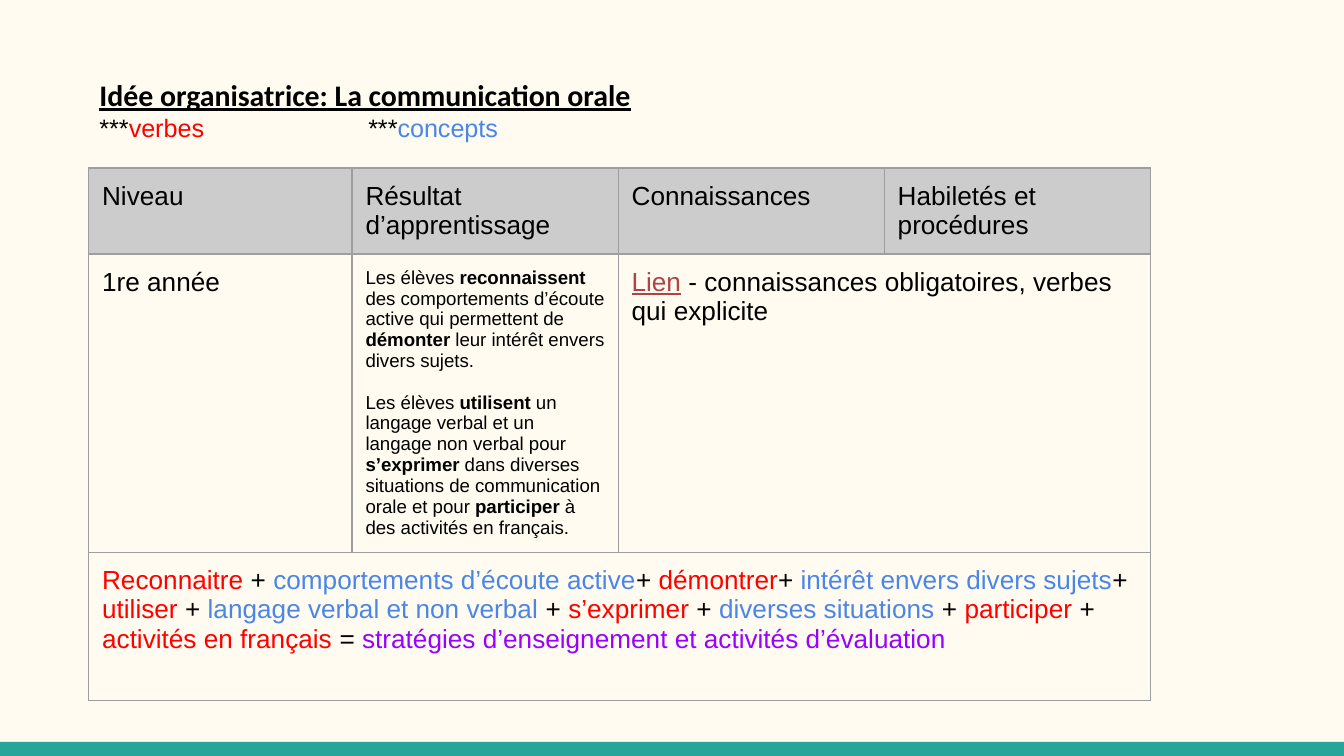
from lxml import etree
from pptx import Presentation
from pptx.dml.color import RGBColor
from pptx.enum.shapes import MSO_SHAPE
from pptx.enum.text import MSO_ANCHOR, MSO_AUTO_SIZE, PP_ALIGN
from pptx.oxml.ns import qn
from pptx.util import Inches, Pt

RECTANGLE = MSO_SHAPE.RECTANGLE
TOP = MSO_ANCHOR.TOP
NO_AUTOFIT = MSO_AUTO_SIZE.NONE
LEFT = PP_ALIGN.LEFT
BLACK, RED, BLUE, PURPLE = "000000", "FF0000", "4A86E8", "9900FF"
LINK_RED, HEADER_GREY, BORDER_GREY = "AF4345", "CCCCCC", "9E9E9E"


def color(hex_text):
    return RGBColor.from_string(hex_text)


def write(paragraph, runs, size, font_name="Arial"):
    """Fill a paragraph with (text, colour, bold, underline) runs."""
    paragraph.alignment = LEFT
    paragraph.font.name = font_name
    paragraph.font.size = Pt(size)
    for text, run_color, bold, underline in runs:
        run = paragraph.add_run()
        run.text = text
        run.font.color.rgb = color(run_color)
        run.font.bold = bold
        run.font.underline = underline


# Widescreen slide, 16:9
presentation = Presentation()
presentation.slide_width = Inches(10)
presentation.slide_height = Inches(10) * 9 // 16
slide = presentation.slides.add_slide(presentation.slide_layouts[5])
slide.background.fill.solid()
slide.background.fill.fore_color.rgb = color("FFFBF0")

# Bottom band
band_top = Inches(5.52)
band = slide.shapes.add_shape(
    RECTANGLE, 0, band_top, Inches(10), presentation.slide_height - band_top)
band.shadow.inherit = False
band.fill.solid()
band.fill.fore_color.rgb = color("26A69A")
band.line.fill.background()

# Title with the colour legend
title = slide.shapes.title
title.left, title.top = Inches(0.64), Inches(0.47)
title.width, title.height = Inches(9.07), Inches(0.67)
frame = title.text_frame
frame.word_wrap = True
frame.auto_size = NO_AUTOFIT
frame.vertical_anchor = TOP
frame.margin_left = frame.margin_right = Inches(0.1)
frame.margin_top = frame.margin_bottom = Inches(0.1)
write(frame.paragraphs[0],
      [("Idée organisatrice: La communication orale", BLACK, True, True)], 16, "Calibri")
legend = frame.add_paragraph()
tab_list = etree.SubElement(legend._p.get_or_add_pPr(), qn("a:tabLst"))
for position in (1, 2):
    etree.SubElement(tab_list, qn("a:tab"), pos=str(Inches(position)), algn="l")
write(legend, [
    ("***", BLACK, False, False), ("verbes", RED, False, False),
    ("\t\t***", BLACK, False, False), ("concepts", BLUE, False, False),
], 13.5)

# Table grid
column_widths = [1.96, 1.98, 1.98, 1.98]
row_heights = [0.64, 2.22, 1.1]
table = slide.shapes.add_table(
    3, 4, Inches(0.66), Inches(1.25),
    Inches(sum(column_widths)), Inches(sum(row_heights))).table
table.first_row = False
table.horz_banding = False
for column, width in zip(table.columns, column_widths):
    column.width = Inches(width)
for row, height in zip(table.rows, row_heights):
    row.height = Inches(height)

# Cell borders, margins and fills
for row_index, row in enumerate(table.rows):
    for cell in row.cells:
        cell.margin_left = cell.margin_right = Inches(0.1)
        cell.margin_top = cell.margin_bottom = Inches(0.1)
        for side in ("a:lnL", "a:lnR", "a:lnT", "a:lnB"):
            border = etree.SubElement(cell._tc.get_or_add_tcPr(), qn(side), w=str(Pt(0.75)))
            border_fill = etree.SubElement(border, qn("a:solidFill"))
            etree.SubElement(border_fill, qn("a:srgbClr"), val=BORDER_GREY)
        if row_index == 0:
            cell.fill.solid()
            cell.fill.fore_color.rgb = color(HEADER_GREY)
        else:
            cell.fill.background()
table.cell(1, 2).merge(table.cell(1, 3))
table.cell(2, 0).merge(table.cell(2, 3))

# Cell contents: position, size, paragraphs of runs
headers = ["Niveau", "Résultat d’apprentissage", "Connaissances", "Habiletés et procédures"]
contents = [(0, index, 14, [[(text, BLACK, False, False)]])
            for index, text in enumerate(headers)]

# Outcomes alternate between plain and bold text
outcomes = [
    ["Les élèves ", "reconnaissent", " des comportements d’écoute active qui permettent de ",
     "démonter ", "leur intérêt envers divers sujets."],
    ["Les élèves ", "utilisent", " un langage verbal et un langage non verbal pour ",
     "s’exprimer", " dans diverses situations de communication orale et pour ",
     "participer", " à des activités en français."],
]
outcome_runs = [[(text, BLACK, index % 2 == 1, False) for index, text in enumerate(outcome)]
                for outcome in outcomes]

summary = [
    ("Reconnaitre", RED), (" + ", BLACK), ("comportements d’écoute active", BLUE),
    ("+ ", BLACK), ("démontrer", RED), ("+ ", BLACK),
    ("intérêt envers divers sujets", BLUE), ("+ ", BLACK), ("utiliser", RED),
    (" + ", BLACK), ("langage verbal et non verbal ", BLUE), ("+ ", BLACK),
    ("s’exprimer ", RED), ("+ ", BLACK), ("diverses situations ", BLUE), ("+ ", BLACK),
    ("participer ", RED), ("+", BLACK), (" activités en français ", RED), ("= ", BLACK),
    ("stratégies d’enseignement et activités d’évaluation", PURPLE),
]
contents += [
    (1, 0, 14, [[("1re année", BLACK, False, False)]]),
    (1, 1, 10, outcome_runs),
    (1, 2, 14, [[("Lien", LINK_RED, False, True),
                 (" - connaissances obligatoires, verbes qui explicite", BLACK, False, False)]]),
    (2, 0, 14, [[(text, run_color, False, False) for text, run_color in summary]]),
]
for row_index, column_index, size, paragraphs in contents:
    frame = table.cell(row_index, column_index).text_frame
    for index, runs in enumerate(paragraphs):
        paragraph = frame.add_paragraph() if index else frame.paragraphs[0]
        if index:
            paragraph.space_before = Pt(11)
        write(paragraph, runs, size)

presentation.save("out.pptx")
